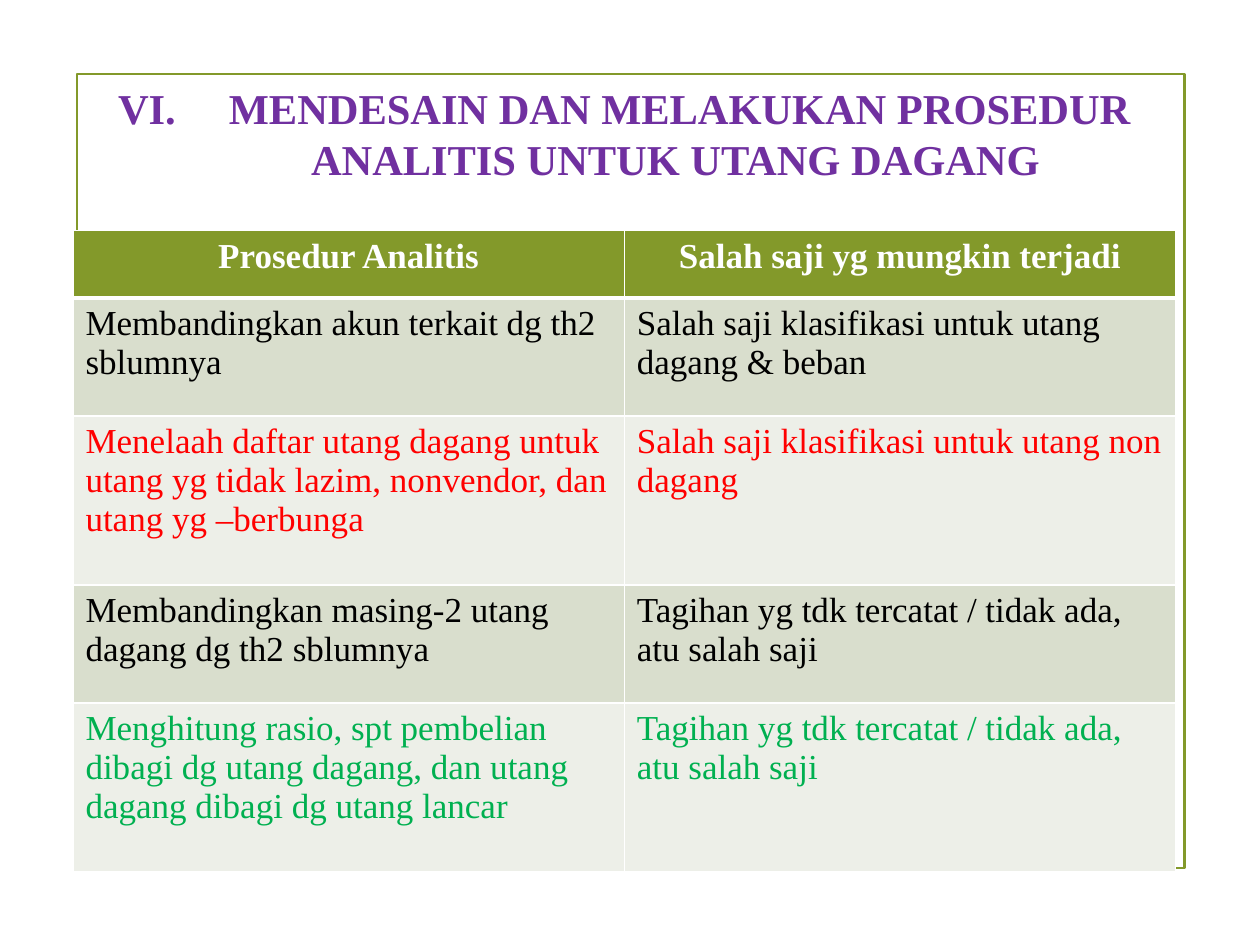
import pptx
import pptx.dml.color
import pptx.enum.shapes
import pptx.enum.text
import pptx.oxml
import pptx.oxml.ns
import pptx.util
from dataclasses import dataclass

Cm = pptx.util.Cm
Pt = pptx.util.Pt
ALIGN = pptx.enum.text.PP_ALIGN


@dataclass(frozen=True)
class Theme:
    font: str = "Times New Roman"
    olive: str = "83992A"
    purple: str = "7030A0"
    white: str = "FFFFFF"
    black: str = "000000"
    red: str = "FF0000"
    green: str = "00B050"
    bands: tuple = ("D9DECD", "EDEFE8")
    title_size: float = 24.3
    title_leading: float = 29.1
    table_size: float = 20


def rgb(value):
    return pptx.dml.color.RGBColor.from_string(value)


def add_text(para, text, *, font, size, color, bold=False, align=ALIGN.LEFT, tracking=None):
    para.alignment = align
    span = para.add_run()
    span.text = text
    span.font.name = font
    span.font.size = Pt(size)
    span.font.bold = bold
    span.font.color.rgb = rgb(color)
    if tracking:
        span.font._element.set("spc", str(round(tracking * 100)))


def set_borders(cell, color, **widths):
    properties = cell._tc.get_or_add_tcPr()
    for position, side in enumerate(("L", "R", "T", "B")):
        width = Pt(widths.get(side, 1))
        border = pptx.oxml.parse_xml(
            f'<a:ln{side} {pptx.oxml.ns.nsdecls("a")} w="{width}">'
            f'<a:solidFill><a:srgbClr val="{color}"/></a:solidFill></a:ln{side}>'
        )
        properties.insert(position, border)


class Page:
    def __init__(self, deck, theme):
        self.theme = theme
        self.slide = deck.slides.add_slide(deck.slide_layouts[6])

    def frame(self, left, top, width, height):
        box = self.slide.shapes.add_shape(
            pptx.enum.shapes.MSO_SHAPE.RECTANGLE, Cm(left), Cm(top), Cm(width), Cm(height)
        )
        box.shadow.inherit = False
        box.fill.background()
        box.line.color.rgb = rgb(self.theme.olive)
        box.line.width = Pt(1.25)

    def title(self, left, top, width, height, number, lines, indent):
        theme = self.theme
        box = self.slide.shapes.add_textbox(Cm(left), Cm(top), Cm(width), Cm(height))
        body = box.text_frame
        body.word_wrap = True
        body.margin_left = body.margin_right = body.margin_top = body.margin_bottom = 0
        style = dict(font=theme.font, size=theme.title_size, color=theme.purple,
                     bold=True, align=ALIGN.CENTER)
        first, second = body.paragraphs[0], body.add_paragraph()
        second._p.get_or_add_pPr().set("marL", str(Cm(indent)))
        add_text(first, number, **style)
        add_text(first, " ", tracking=theme.title_size, **style)
        for para, line in zip((first, second), lines):
            para.line_spacing = Pt(theme.title_leading)
            add_text(para, line, **style)

    def table(self, left, top, width, heights, header, rows):
        theme = self.theme
        grid = self.slide.shapes.add_table(
            len(heights), len(header), Cm(left), Cm(top), Cm(width), Cm(sum(heights))
        ).table
        for row, height in zip(grid.rows, heights):
            row.height = Cm(height)
        for column, text in enumerate(header):
            self.cell(grid.cell(0, column), text, theme.olive, theme.white,
                      bold=True, align=ALIGN.CENTER, borders={"B": 3})
        for index, (color, *texts) in enumerate(rows):
            borders = {"T": 3} if index == 0 else {}
            for column, text in enumerate(texts):
                self.cell(grid.cell(index + 1, column), text,
                          theme.bands[index % 2], color, borders=borders)

    def cell(self, cell, text, fill, color, borders, **style):
        cell.fill.solid()
        cell.fill.fore_color.rgb = rgb(fill)
        set_borders(cell, self.theme.white, **borders)
        add_text(cell.text_frame.paragraphs[0], text, font=self.theme.font,
                 size=self.theme.table_size, color=color, **style)


def main():
    theme = Theme()
    deck = pptx.Presentation()
    deck.slide_width, deck.slide_height = Cm(25.4), Cm(19.05)
    page = Page(deck, theme)
    page.frame(1.55, 1.5, 22.33, 16)
    page.title(1.47, 1.65, 22.23, 2.06, "VI.",
               ("MENDESAIN DAN MELAKUKAN PROSEDUR", "ANALITIS UNTUK UTANG DAGANG"),
               indent=2.06)
    short, tall = 2.38, 3.4
    unrecorded = "Tagihan yg tdk tercatat / tidak ada, atu salah saji"
    page.table(
        1.47, 4.65, 22.23, (1.36, short, tall, short, tall),
        ("Prosedur Analitis", "Salah saji yg mungkin terjadi"),
        (
            (theme.black, "Membandingkan akun terkait dg th2 sblumnya",
             "Salah saji klasifikasi untuk utang dagang & beban"),
            (theme.red, "Menelaah daftar utang dagang untuk utang yg tidak lazim, "
             "nonvendor, dan utang yg –berbunga",
             "Salah saji klasifikasi untuk utang non dagang"),
            (theme.black, "Membandingkan masing-2 utang dagang dg th2 sblumnya", unrecorded),
            (theme.green, "Menghitung rasio, spt pembelian dibagi dg utang dagang, "
             "dan utang dagang dibagi dg utang lancar", unrecorded),
        ),
    )
    deck.save("out.pptx")


if __name__ == "__main__":
    main()
